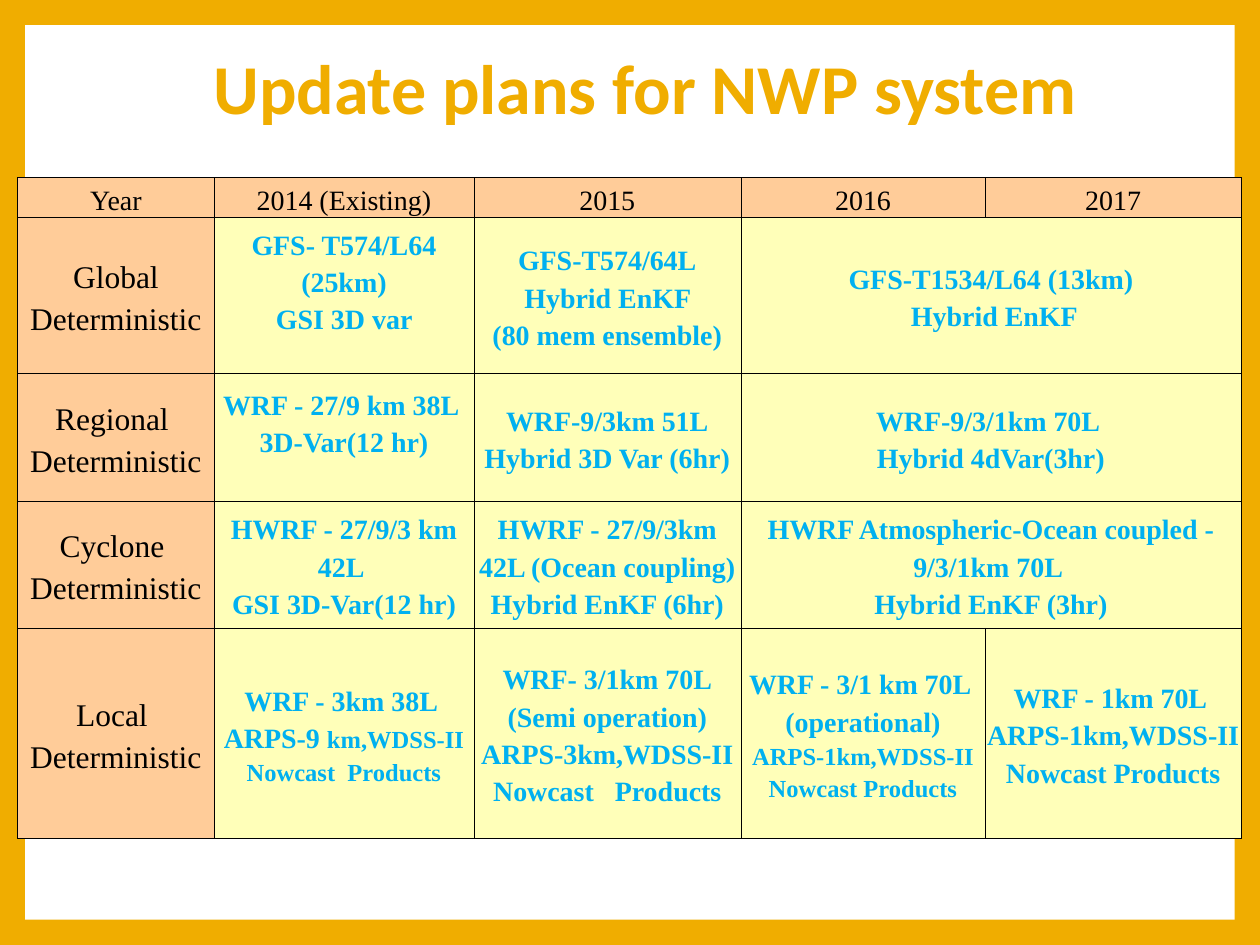
"""Build the slide with the update plans for the NWP system."""
import lxml.etree
import pptx
import pptx.dml.color
import pptx.enum.shapes
import pptx.enum.text
import pptx.oxml.ns
import pptx.util
from pptx.util import Inches, Pt

TITLE = "Update plans for NWP system"
GOLD, WHITE, BLACK = "F0AD00", "FFFFFF", "000000"
PEACH, CREAM, SKY = "FFCC99", "FFFFB9", "00B0F0"
COLUMN_WIDTHS = [1.56, 2.06, 2.12, 1.94, 2.03]
ROW_HEIGHTS = [0.3, 1.24, 1.01, 1.01, 1.67]
HEADER_SIZE, LABEL_SIZE, PLAN_SIZE, SMALL_SIZE = 16, 18, 16, 14
CELL_MARGIN = 0.01
RAISED_CELLS = {(1, 1): 0.26, (2, 1): 0.26}

YEARS = ["Year", "2014 (Existing)", "2015", "2016", "2017"]
PLANS = [
    ("Global", [
        ["GFS- T574/L64 (25km)", " GSI 3D var "],
        ["GFS-T574/64L", " Hybrid EnKF ", "(80 mem ensemble)"],
        ["GFS-T1534/L64 (13km)", " Hybrid EnKF"],
    ]),
    ("Regional ", [
        ["WRF - 27/9 km 38L ", "3D-Var(12 hr)"],
        ["WRF-9/3km 51L", " Hybrid 3D Var (6hr) "],
        ["WRF-9/3/1km 70L ", "Hybrid 4dVar(3hr)"],
    ]),
    ("Cyclone ", [
        ["HWRF - 27/9/3 km 42L ", "GSI 3D-Var(12 hr)"],
        ["HWRF - 27/9/3km 42L (Ocean coupling)", " Hybrid EnKF (6hr) "],
        ["HWRF Atmospheric-Ocean coupled - 9/3/1km 70L ", "Hybrid EnKF (3hr)"],
    ]),
    ("Local ", [
        ["WRF - 3km 38L ",
         [("ARPS-9 ", PLAN_SIZE), ("km,WDSS-II Nowcast  Products", SMALL_SIZE)]],
        ["WRF- 3/1km 70L", "(Semi operation)", "ARPS-3km,WDSS-II Nowcast   Products"],
        ["WRF - 3/1 km 70L ", "(operational)",
         [("ARPS-1km,WDSS-II Nowcast Products", SMALL_SIZE)]],
        ["WRF - 1km 70L ", "ARPS-1km,WDSS-II Nowcast Products"],
    ]),
]


def color(value):
    return pptx.dml.color.RGBColor.from_string(value)


def paint(fill, value):
    fill.solid()
    fill.fore_color.rgb = color(value)


def write(text_frame, lines, font_name, size, text_color, bold, spacing):
    for index, line in enumerate(lines):
        paragraph = text_frame.paragraphs[0] if index == 0 else text_frame.add_paragraph()
        paragraph.alignment = pptx.enum.text.PP_ALIGN.CENTER
        paragraph.line_spacing = spacing
        runs = [(line, size)] if isinstance(line, str) else line
        for text, run_size in runs:
            run = paragraph.add_run()
            run.text = text
            run.font.name = font_name
            run.font.size = Pt(run_size)
            run.font.bold = bold
            run.font.color.rgb = color(text_color)


def add_borders(cell):
    properties = cell._tc.get_or_add_tcPr()
    qualify = pptx.oxml.ns.qn
    for side in ("a:lnL", "a:lnR", "a:lnT", "a:lnB"):
        border = lxml.etree.SubElement(properties, qualify(side), w=str(int(Pt(0.28))))
        fill = lxml.etree.SubElement(border, qualify("a:solidFill"))
        lxml.etree.SubElement(fill, qualify("a:srgbClr"), val=BLACK)


def fill_cell(table, row, column, lines, size):
    cell = table.cell(row, column)
    is_plan = row > 0 and column > 0
    cell.vertical_anchor = pptx.enum.text.MSO_ANCHOR.MIDDLE
    cell.margin_left = cell.margin_right = cell.margin_top = Inches(CELL_MARGIN)
    cell.margin_bottom = Inches(RAISED_CELLS.get((row, column), CELL_MARGIN))
    add_borders(cell)
    paint(cell.fill, CREAM if is_plan else PEACH)
    write(cell.text_frame, lines, "Times New Roman", size,
          SKY if is_plan else BLACK, is_plan, 1.2)


def add_plan_table(slide):
    frame = slide.shapes.add_table(
        len(ROW_HEIGHTS), len(COLUMN_WIDTHS), Inches(0.14), Inches(1.41),
        Inches(sum(COLUMN_WIDTHS)), Inches(sum(ROW_HEIGHTS)))
    table = frame.table
    table.first_row = table.horz_banding = False
    for column, width in zip(table.columns, COLUMN_WIDTHS):
        column.width = Inches(width)
    for row, height in zip(table.rows, ROW_HEIGHTS):
        row.height = Inches(height)
    for column, year in enumerate(YEARS):
        fill_cell(table, 0, column, [year], HEADER_SIZE)
    last = len(YEARS) - 1
    for row, (label, plans) in enumerate(PLANS, start=1):
        fill_cell(table, row, 0, [label, "Deterministic"], LABEL_SIZE)
        for column, lines in enumerate(plans, start=1):
            fill_cell(table, row, column, lines, PLAN_SIZE)
        if len(plans) < last:
            fill_cell(table, row, last, [], PLAN_SIZE)
            table.cell(row, len(plans)).merge(table.cell(row, last))


def main():
    presentation = pptx.Presentation()
    presentation.slide_width, presentation.slide_height = Inches(10), Inches(7.5)
    slide = presentation.slides.add_slide(presentation.slide_layouts[6])
    paint(slide.background.fill, GOLD)

    panel = slide.shapes.add_shape(
        pptx.enum.shapes.MSO_SHAPE.RECTANGLE,
        Inches(0.2), Inches(0.2), Inches(9.6), Inches(7.1))
    panel.shadow.inherit = False
    paint(panel.fill, WHITE)
    panel.line.fill.background()

    add_plan_table(slide)

    title = slide.shapes.add_textbox(Inches(1.07), Inches(0.28), Inches(8.1), Inches(0.9))
    title.text_frame.word_wrap = True
    title.text_frame.vertical_anchor = pptx.enum.text.MSO_ANCHOR.MIDDLE
    write(title.text_frame, [TITLE], "Calibri", 40, GOLD, True, 0.9)

    presentation.save("out.pptx")


if __name__ == "__main__":
    main()
